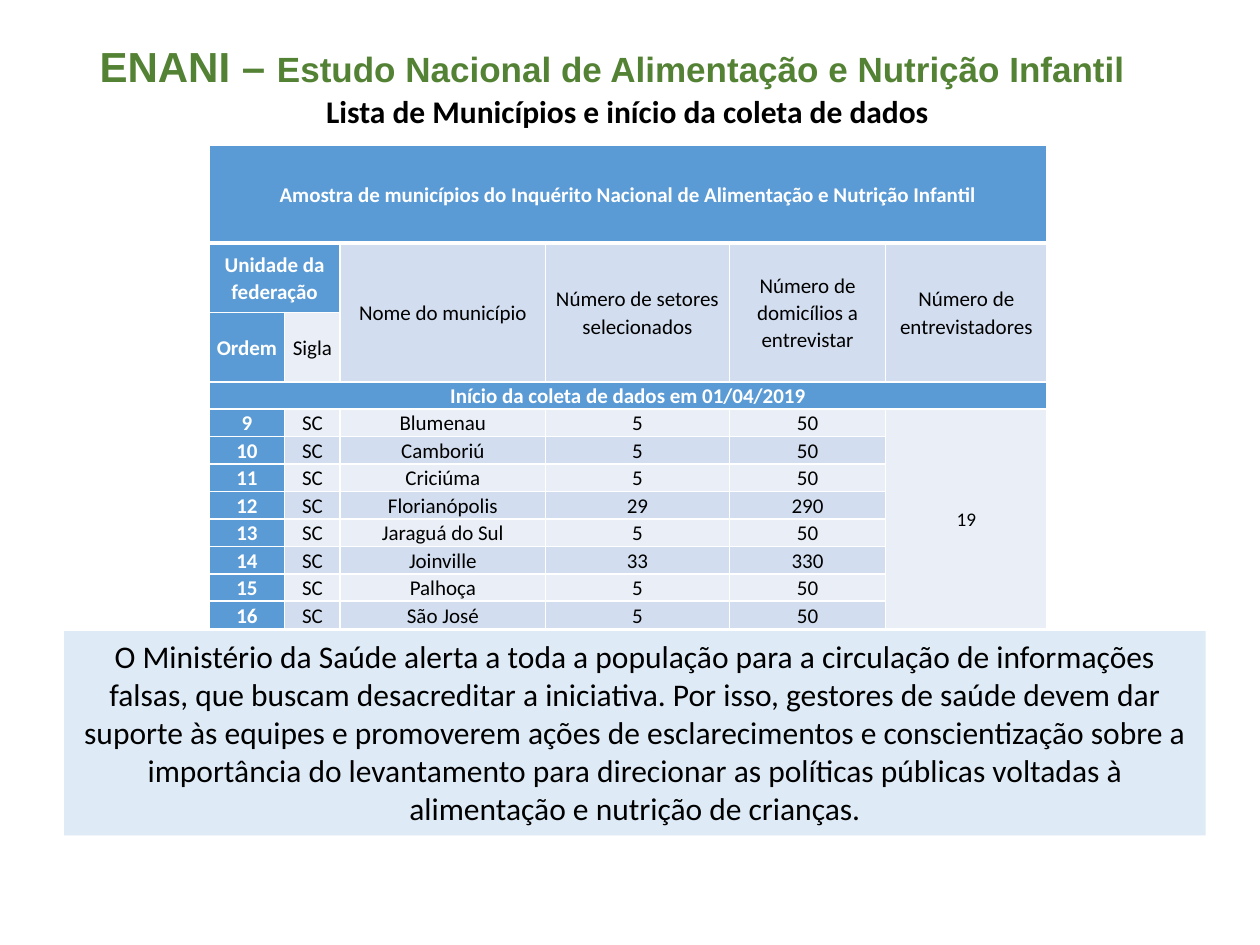
from dataclasses import dataclass

from lxml import etree
from pptx import Presentation
from pptx.dml.color import RGBColor
from pptx.enum.shapes import MSO_SHAPE
from pptx.enum.text import MSO_ANCHOR, MSO_AUTO_SIZE, PP_ALIGN
from pptx.oxml.ns import qn
from pptx.util import Inches, Pt

RECTANGLE = MSO_SHAPE.RECTANGLE
MIDDLE = MSO_ANCHOR.MIDDLE
TOP = MSO_ANCHOR.TOP
FIT_SHAPE = MSO_AUTO_SIZE.SHAPE_TO_FIT_TEXT
NO_FIT = MSO_AUTO_SIZE.NONE
CENTER = PP_ALIGN.CENTER
LEFT = PP_ALIGN.LEFT

WHITE = RGBColor(0xFF, 0xFF, 0xFF)
BLACK = RGBColor(0x00, 0x00, 0x00)
GREEN = RGBColor(0x54, 0x82, 0x35)
BLUE = RGBColor(0x5B, 0x9B, 0xD5)
BAND_DARK = RGBColor(0xD2, 0xDE, 0xEF)
BAND_LIGHT = RGBColor(0xEA, 0xEF, 0xF7)
NOTICE_FILL = RGBColor(0xDE, 0xEB, 0xF7)

COLUMN_WIDTHS = (0.6, 0.44, 1.63, 1.46, 1.24, 1.28)
HEADER_HEIGHTS = (0.78, 0.55, 0.55, 0.18)
DATA_HEIGHT = 0.18
FIRST_DATA_ROW = len(HEADER_HEIGHTS)
FIRST_ORDER = 9
STATE = "SC"


@dataclass(frozen=True)
class Municipality:
    name: str
    sectors: int
    households: int


@dataclass(frozen=True)
class TableCell:
    row: int
    column: int
    text: str
    fill: RGBColor
    row_span: int = 1
    column_span: int = 1
    size: int = 12


MUNICIPALITIES = (
    Municipality("Blumenau", 5, 50),
    Municipality("Camboriú", 5, 50),
    Municipality("Criciúma", 5, 50),
    Municipality("Florianópolis", 29, 290),
    Municipality("Jaraguá do Sul", 5, 50),
    Municipality("Joinville", 33, 330),
    Municipality("Palhoça", 5, 50),
    Municipality("São José", 5, 50),
)

HEADINGS = (
    "Nome do município",
    "Número de setores selecionados",
    "Número de domicílios a entrevistar",
    "Número de entrevistadores",
)

NOTICE = (
    "O Ministério da Saúde alerta a toda a população para a circulação de "
    "informações falsas, que buscam desacreditar a iniciativa. Por isso, "
    "gestores de saúde devem dar suporte às equipes e promoverem ações de "
    "esclarecimentos e conscientização sobre a importância do levantamento "
    "para direcionar as políticas públicas voltadas à alimentação e nutrição "
    "de crianças."
)


def add_text(paragraph, text: str, *, size: int, color: RGBColor = BLACK,
             bold: bool = False, font: str = "Calibri", align=CENTER,
             line_spacing: float = 1.0) -> None:
    paragraph.alignment = align
    paragraph.line_spacing = line_spacing
    span = paragraph.add_run()
    span.text = text
    span.font.name = font
    span.font.size = Pt(size)
    span.font.bold = bold
    span.font.color.rgb = color


def set_borders(cell, widths: dict[str, float]) -> None:
    properties = cell._tc.get_or_add_tcPr()
    for side, width in widths.items():
        line = etree.SubElement(properties, qn(f"a:ln{side}"), w=str(Pt(width)))
        fill = etree.SubElement(line, qn("a:solidFill"))
        etree.SubElement(fill, qn("a:srgbClr"), val=str(WHITE))


def table_cells() -> list[TableCell]:
    cells = [
        TableCell(0, 0, "Amostra de municípios do Inquérito Nacional de "
                  "Alimentação e Nutrição Infantil", BLUE, column_span=6),
        TableCell(1, 0, "Unidade da federação", BLUE, column_span=2),
        TableCell(2, 0, "Ordem", BLUE),
        TableCell(2, 1, "Sigla", BAND_LIGHT),
        TableCell(3, 0, "Início da coleta de dados em 01/04/2019", BLUE,
                  column_span=6),
        TableCell(FIRST_DATA_ROW, 5, "19", BAND_LIGHT,
                  row_span=len(MUNICIPALITIES), size=11),
    ]
    for column, heading in enumerate(HEADINGS, start=2):
        cells.append(TableCell(1, column, heading, BAND_DARK, row_span=2))
    for index, town in enumerate(MUNICIPALITIES):
        band = BAND_DARK if index % 2 else BAND_LIGHT
        values = (FIRST_ORDER + index, STATE, town.name, town.sectors,
                  town.households)
        for column, value in enumerate(values):
            cells.append(TableCell(FIRST_DATA_ROW + index, column, str(value),
                                   band if column else BLUE))
    return cells


def draw_cell(table, item: TableCell) -> None:
    cell = table.cell(item.row, item.column)
    if item.row_span > 1 or item.column_span > 1:
        cell.merge(table.cell(item.row + item.row_span - 1,
                              item.column + item.column_span - 1))
    cell.fill.solid()
    cell.fill.fore_color.rgb = item.fill
    cell.vertical_anchor = MIDDLE
    cell.margin_left = cell.margin_right = Inches(0.05)
    cell.margin_top = cell.margin_bottom = 0
    emphasized = item.fill == BLUE
    add_text(cell.text_frame.paragraphs[0], item.text, size=item.size,
             color=WHITE if emphasized else BLACK, bold=emphasized,
             line_spacing=1.07)


def draw_table(page) -> None:
    heights = HEADER_HEIGHTS + (DATA_HEIGHT,) * len(MUNICIPALITIES)
    table = page.shapes.add_table(
        len(heights), len(COLUMN_WIDTHS), Inches(1.66), Inches(1.15),
        Inches(sum(COLUMN_WIDTHS)), Inches(sum(heights))).table
    table.first_row = False
    table.horz_banding = False
    for column, width in zip(table.columns, COLUMN_WIDTHS):
        column.width = Inches(width)
    for index, (row, height) in enumerate(zip(table.rows, heights)):
        row.height = Inches(height)
        for cell in row.cells:
            set_borders(cell, {"L": 1, "R": 1, "T": 3 if index == 1 else 1,
                               "B": 3 if index == 0 else 1})
    for item in table_cells():
        draw_cell(table, item)


def draw_subtitle(page) -> None:
    box = page.shapes.add_textbox(Inches(2.49), Inches(0.68),
                                  Inches(5.02), Inches(0.4))
    box.text_frame.word_wrap = False
    box.text_frame.auto_size = FIT_SHAPE
    add_text(box.text_frame.paragraphs[0],
             "Lista de Municípios e início da coleta de dados",
             size=18, bold=True, align=LEFT)


def draw_title(page) -> None:
    title = page.shapes.title
    title.left, title.top = Inches(0.69), Inches(0.21)
    title.width, title.height = Inches(8.62), Inches(0.67)
    frame = title.text_frame
    frame.word_wrap = True
    frame.auto_size = NO_FIT
    frame.vertical_anchor = MIDDLE
    for text, size in (("ENANI – ", 24),
                       ("Estudo Nacional de Alimentação e Nutrição Infantil", 20)):
        add_text(frame.paragraphs[0], text, size=size, color=GREEN, bold=True,
                 font="Arial", align=LEFT, line_spacing=0.9)


def draw_notice(page) -> None:
    box = page.shapes.add_shape(RECTANGLE, Inches(0.51), Inches(5.01),
                                Inches(9.06), Inches(1.62))
    box.shadow.inherit = False
    box.fill.solid()
    box.fill.fore_color.rgb = NOTICE_FILL
    box.line.fill.background()
    frame = box.text_frame
    frame.word_wrap = True
    frame.auto_size = FIT_SHAPE
    frame.vertical_anchor = TOP
    add_text(frame.paragraphs[0], NOTICE, size=18)


def main() -> None:
    deck = Presentation()
    deck.slide_width, deck.slide_height = Inches(10), Inches(7.5)
    page = deck.slides.add_slide(deck.slide_layouts[5])
    draw_table(page)
    draw_subtitle(page)
    draw_title(page)
    draw_notice(page)
    deck.save("out.pptx")


if __name__ == "__main__":
    main()
